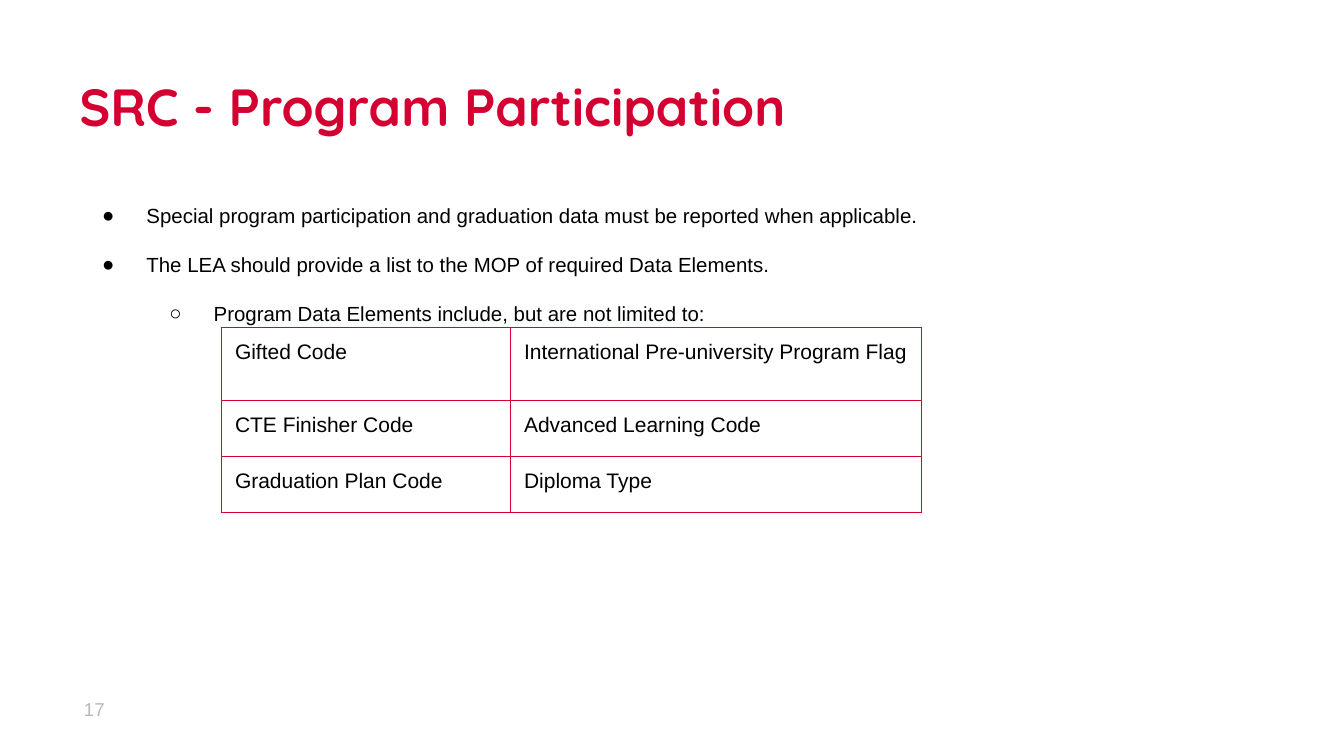
from lxml import etree
from pptx import Presentation
from pptx.dml.color import RGBColor
from pptx.enum import text
from pptx.oxml import ns
from pptx.util import Pt

RED = RGBColor(0xD5, 0x00, 0x32)
BLACK = RGBColor(0, 0, 0)
GRAY = RGBColor(0xB7, 0xB7, 0xB7)
INSET = 9.6


def write(frame, words, *, size, color=BLACK, font="Arial", bold=False,
          anchor=text.MSO_ANCHOR.TOP, new_paragraph=False):
    frame.word_wrap = True
    frame.auto_size = text.MSO_AUTO_SIZE.NONE
    frame.vertical_anchor = anchor
    frame.margin_left = frame.margin_right = Pt(INSET)
    frame.margin_top = frame.margin_bottom = Pt(INSET)
    paragraph = frame.add_paragraph() if new_paragraph else frame.paragraphs[0]
    paragraph.alignment = text.PP_ALIGN.LEFT
    run = paragraph.add_run()
    run.text = words
    run.font.size = Pt(size)
    run.font.name = font
    run.font.bold = bold
    run.font.color.rgb = color
    return paragraph


def add_child(parent, tag, **attributes):
    return etree.SubElement(parent, ns.qn(tag), attributes)


presentation = Presentation()
presentation.slide_width = Pt(960)
presentation.slide_height = Pt(540)
slide = presentation.slides.add_slide(presentation.slide_layouts[5])

# Title
title = slide.shapes.title
title.left, title.top, title.width, title.height = Pt(47), Pt(43.3), Pt(894), Pt(60.5)
write(title.text_frame, "SRC - Program Participation", size=37.3, color=RED,
      font="Quicksand", bold=True)

# Page number
page_number = slide.shapes.add_textbox(Pt(50.4), Pt(486), Pt(57.6), Pt(41))
write(page_number.text_frame, "17", size=13.3, color=GRAY, anchor=text.MSO_ANCHOR.MIDDLE)

# Data element table
ROWS = [
    ("Gifted Code", "International Pre-university Program Flag"),
    ("CTE Finisher Code", "Advanced Learning Code"),
    ("Graduation Plan Code", "Diploma Type"),
]
COLUMN_WIDTHS = (206.5, 293.5)
ROW_HEIGHTS = (52, 40, 40)
table = slide.shapes.add_table(len(ROWS), 2, Pt(158.3), Pt(233.8),
                               Pt(sum(COLUMN_WIDTHS)), Pt(sum(ROW_HEIGHTS))).table
table.first_row = table.horz_banding = False
for column, width in zip(table.columns, COLUMN_WIDTHS):
    column.width = Pt(width)
for row, height, labels in zip(table.rows, ROW_HEIGHTS, ROWS):
    row.height = Pt(height)
    for cell, label in zip(row.cells, labels):
        cell.margin_left = cell.margin_right = Pt(INSET)
        cell.margin_top = cell.margin_bottom = Pt(INSET)
        paragraph = cell.text_frame.paragraphs[0]
        run = paragraph.add_run()
        run.text = label
        run.font.size = Pt(15)
        run.font.name = "Arial"
        run.font.color.rgb = BLACK
        properties = cell._tc.get_or_add_tcPr()
        for side in ("a:lnL", "a:lnR", "a:lnT", "a:lnB"):
            border = add_child(properties, side, w=str(Pt(0.75)))
            add_child(add_child(border, "a:solidFill"), "a:srgbClr", val=str(RED))
        cell.fill.background()

# Bulleted text: words, level, bullet
BULLETS = [
    ("Special program participation and graduation data must be reported when applicable.", 0, "●"),
    ("The LEA should provide a list to the MOP of required Data Elements.", 0, "●"),
    ("Program Data Elements include, but are not limited to:", 1, "○"),
]
body = slide.shapes.add_textbox(Pt(47), Pt(117.8), Pt(894), Pt(332.6))
for index, (words, level, bullet) in enumerate(BULLETS):
    paragraph = write(body.text_frame, words, size=14.6, new_paragraph=index > 0)
    paragraph.level = level
    paragraph.line_spacing = 2.0
    properties = paragraph._p.get_or_add_pPr()
    properties.set("marL", str(Pt(48 * (level + 1))))
    properties.set("indent", str(Pt(-31.7)))
    add_child(add_child(properties, "a:buClr"), "a:srgbClr", val=str(BLACK))
    add_child(properties, "a:buFont", typeface="Arial")
    add_child(properties, "a:buChar", char=bullet)

presentation.save("out.pptx")
